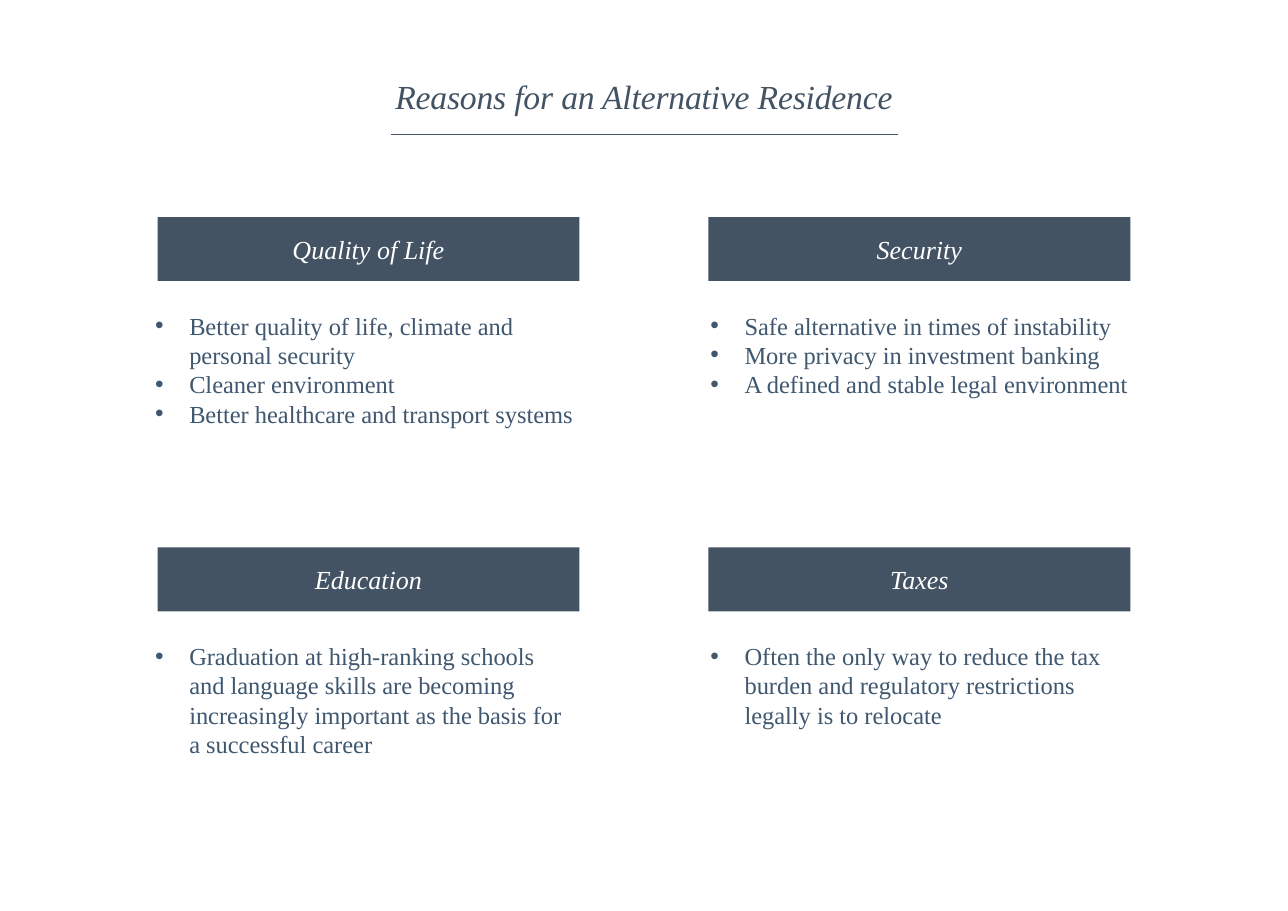
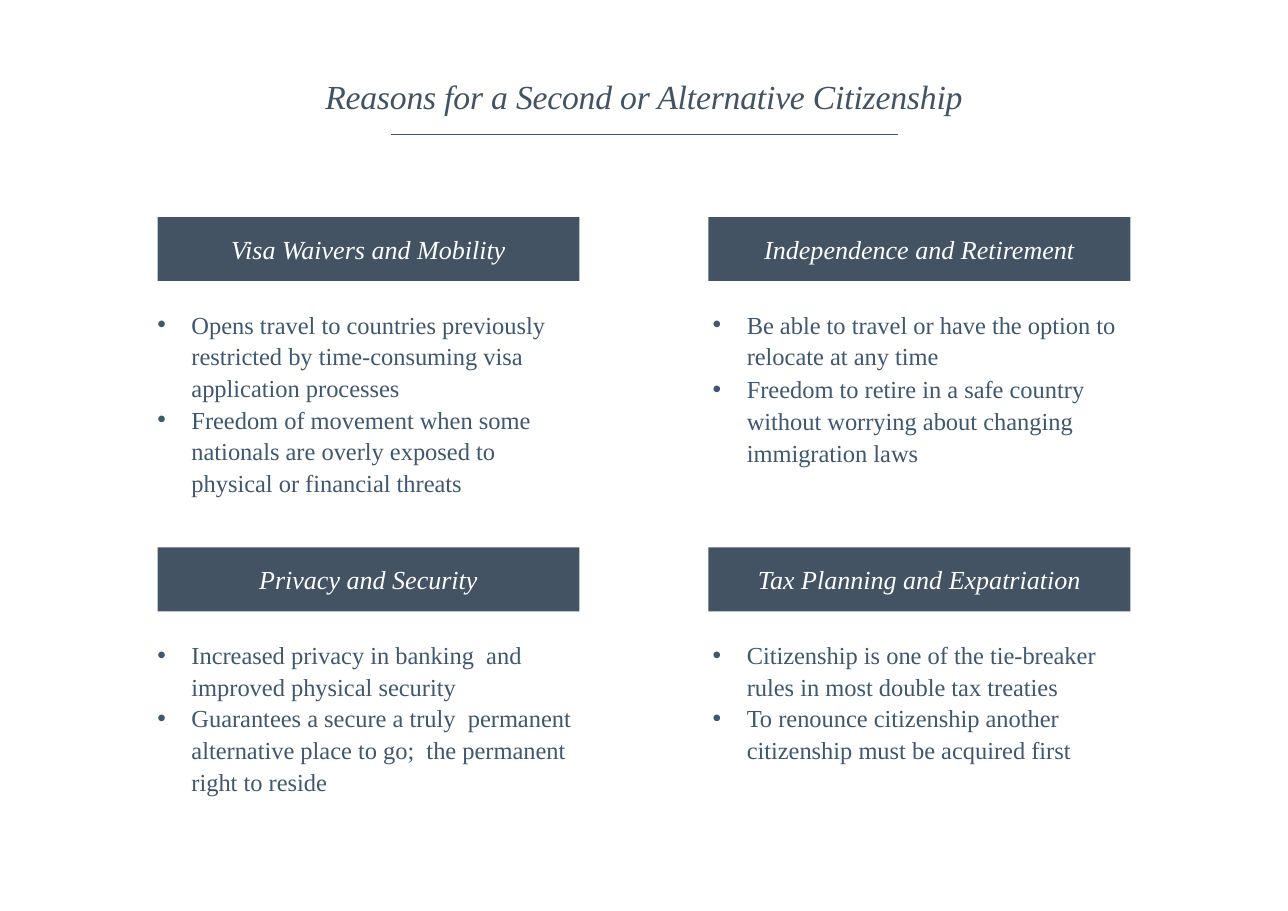
"""Build two slides of reasons for an alternative residence and a second citizenship."""
from pptx import Presentation
from pptx.dml.color import RGBColor
from pptx.enum.shapes import MSO_CONNECTOR as Connector, MSO_SHAPE as Preset
from pptx.enum.text import MSO_ANCHOR as Anchor, MSO_AUTO_SIZE as AutoSize, PP_ALIGN as Align
from pptx.oxml.ns import qn
from pptx.util import Inches, Pt
from lxml.etree import SubElement

COLORS = {"slate": "435363", "rule": "445567", "body": "3F576F", "white": "FFFFFF"}
FONT = "Times New Roman"
BAND_LEFTS, BAND_TOPS = (1.43, 6.43), (1.97, 4.97)
BAND_WIDTH, BAND_HEIGHT = 3.83, 0.58
TEXT_LEFTS, TEXT_WIDTH = (1.31, 6.35), 4.04
LINE_HEIGHT = 0.27
HANGING = 0.31

SLIDES = [
    {
        "title": "Reasons for an Alternative Residence",
        "drop": 0.8, "indent": 0.31, "spacing": 1.0,
        "cards": [
            {"heading": "Quality of Life", "lines": 4, "bullets": [
                "Better quality of life, climate and personal security",
                "Cleaner environment",
                "Better healthcare and transport systems"]},
            {"heading": "Security", "lines": 3, "bullets": [
                "Safe alternative in times of instability",
                "More privacy in investment banking",
                "A defined and stable legal environment"]},
            {"heading": "Education", "lines": 4, "width": 3.96, "bullets": [
                "Graduation at high-ranking schools and language skills are becoming "
                "increasingly important as the basis for a successful career"]},
            {"heading": "Taxes", "lines": 3, "bullets": [
                "Often the only way to reduce the tax burden and regulatory "
                "restrictions legally is to relocate"]},
        ],
    },
    {
        "title": "Reasons for a Second or Alternative Citizenship",
        "drop": 0.77, "indent": 0.33, "spacing": 1.08,
        "cards": [
            {"heading": "Visa Waivers and Mobility", "lines": 6, "bullets": [
                "Opens travel to countries previously restricted by time-consuming "
                "visa application processes",
                "Freedom of movement when some nationals are overly exposed to "
                "physical or financial threats"]},
            {"heading": "Independence and Retirement", "lines": 5, "before": 1, "bullets": [
                "Be able to travel or have the option to relocate at any time",
                "Freedom to retire in a safe country without worrying about "
                "changing immigration laws"]},
            {"heading": "Privacy and Security", "lines": 5, "bullets": [
                "Increased privacy in banking  and improved physical security",
                "Guarantees a secure a truly  permanent alternative place to go;  "
                "the permanent right to reside"]},
            {"heading": "Tax Planning and Expatriation", "lines": 4, "bullets": [
                "Citizenship is one of the tie-breaker rules in most double tax treaties",
                "To renounce citizenship another citizenship must be acquired first"]},
        ],
    },
]


def color(name):
    return RGBColor.from_string(COLORS[name])


def style(paragraph, size, color_name, italic=False, align=Align.LEFT):
    paragraph.alignment = align
    font = paragraph.font
    font.name, font.size, font.italic = FONT, Pt(size), italic
    font.color.rgb = color(color_name)


def add_text_frame(slide, left, top, width, height):
    box = slide.shapes.add_textbox(Inches(left), Inches(top), Inches(width), Inches(height))
    frame = box.text_frame
    frame.word_wrap = True
    frame.auto_size = AutoSize.SHAPE_TO_FIT_TEXT
    return frame


def add_title(slide, title):
    rule = slide.shapes.add_connector(
        Connector.STRAIGHT, Inches(3.55), Inches(1.22), Inches(8.15), Inches(1.22))
    rule.line.color.rgb = color("rule")
    rule.line.width = Pt(0.5)
    SubElement(rule._element.spPr, qn("a:effectLst"))
    paragraph = add_text_frame(slide, 1.43, 0.64, 8.83, 0.47).paragraphs[0]
    run = paragraph.add_run()
    run.text = title
    run.font._element.set("spc", "-10")
    style(paragraph, 22, "slate", True, Align.CENTER)


def add_band(slide, left, top, heading):
    band = slide.shapes.add_shape(
        Preset.RECTANGLE, Inches(left), Inches(top), Inches(BAND_WIDTH), Inches(BAND_HEIGHT))
    band.shadow.inherit = False
    band.fill.solid()
    band.fill.fore_color.rgb = color("slate")
    band.line.fill.background()
    band.text_frame.vertical_anchor = Anchor.MIDDLE
    paragraph = band.text_frame.paragraphs[0]
    paragraph.text = heading
    style(paragraph, 17, "white", True, Align.CENTER)


def add_bullets(slide, left, top, card, indent, spacing):
    height = 0.1 + card["lines"] * LINE_HEIGHT * spacing
    frame = add_text_frame(slide, left, top, card.get("width", TEXT_WIDTH), height)
    for index, text in enumerate(card["bullets"]):
        paragraph = frame.add_paragraph() if index else frame.paragraphs[0]
        paragraph.text = text
        paragraph.line_spacing = spacing
        paragraph.space_before = Pt(card.get("before", 0))
        style(paragraph, 16, "body")
        properties = paragraph._p.get_or_add_pPr()
        properties.set("marL", str(Inches(indent)))
        properties.set("indent", str(-Inches(HANGING)))
        bullet_font = SubElement(properties, qn("a:buFont"), typeface="Arial")
        bullet = SubElement(properties, qn("a:buChar"), char="•")
        properties.find(qn("a:defRPr")).addprevious(bullet_font)
        bullet_font.addnext(bullet)


def main():
    presentation = Presentation()
    presentation.slide_width, presentation.slide_height = Inches(11.69), Inches(8.27)
    for content in SLIDES:
        slide = presentation.slides.add_slide(presentation.slide_layouts[6])
        add_title(slide, content["title"])
        for index, card in enumerate(content["cards"]):
            row, column = divmod(index, 2)
            top = BAND_TOPS[row]
            add_band(slide, BAND_LEFTS[column], top, card["heading"])
            add_bullets(slide, TEXT_LEFTS[column], top + content["drop"], card,
                        content["indent"], content["spacing"])
    presentation.save("out.pptx")


if __name__ == "__main__":
    main()
